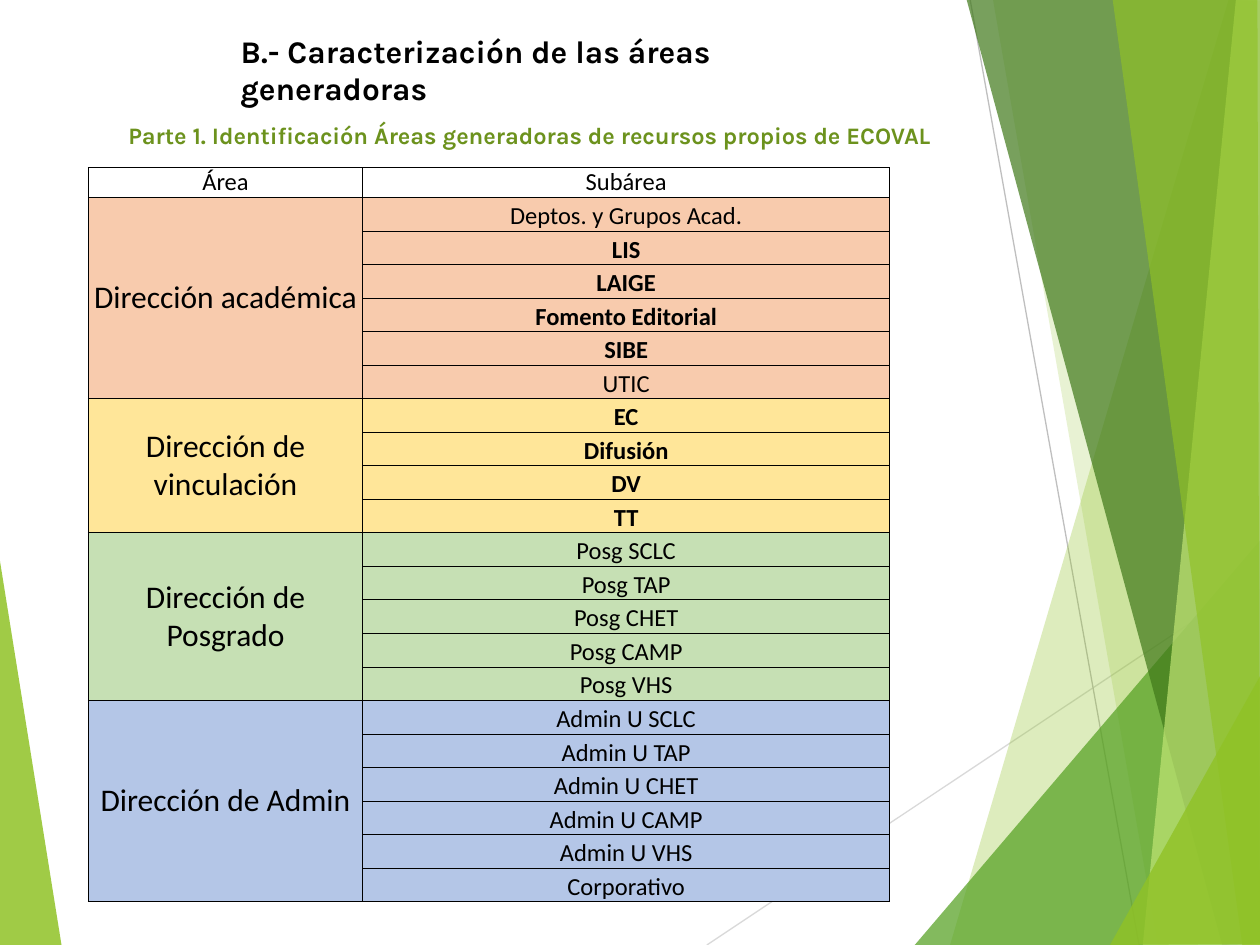
from lxml import etree
from pptx import Presentation
from pptx.dml.color import RGBColor
from pptx.enum.shapes import MSO_CONNECTOR
from pptx.enum.text import MSO_ANCHOR, MSO_AUTO_SIZE, PP_ALIGN
from pptx.oxml.ns import qn
from pptx.util import Inches, Pt

LEFT, CENTER = PP_ALIGN.LEFT, PP_ALIGN.CENTER
TOP, MIDDLE, BOTTOM = MSO_ANCHOR.TOP, MSO_ANCHOR.MIDDLE, MSO_ANCHOR.BOTTOM
NO_FIT = MSO_AUTO_SIZE.NONE
STRAIGHT = MSO_CONNECTOR.STRAIGHT

HUES = {
    "black": "000000", "olive": "6C921D", "lime": "90C226",
    "green": "54A021", "dark": "3F7819", "pale": "C0E474",
    "silver": "D9D9D9", "gray": "BFBFBF",
    "peach": "F8CBAD", "cream": "FFE699", "mint": "C6E0B4", "sky": "B4C6E7",
}

SITES = ["SCLC", "TAP", "CHET", "CAMP", "VHS"]
AREAS = [
    ("Dirección académica", "peach",
     ["Deptos. y Grupos Acad.", "LIS", "LAIGE", "Fomento Editorial", "SIBE", "UTIC"]),
    ("Dirección de vinculación", "cream", ["EC", "Difusión", "DV", "TT"]),
    ("Dirección de Posgrado", "mint", [f"Posg {site}" for site in SITES]),
    ("Dirección de Admin", "sky",
     [f"Admin U {site}" for site in SITES] + ["Corporativo"]),
]
BOLD = {"LIS", "LAIGE", "Fomento Editorial", "SIBE", "EC", "Difusión", "DV", "TT"}

LINES = [
    ((5.61, 7.5), (10.01, 4.57), "silver"),
    ((7.7, 0), (9.04, 7.5), "gray"),
]
SHARDS = [
    ("lime", 85, [(-0.01, 4.39), (0.49, 7.51), (-0.01, 7.5)]),
    ("lime", 30, [(9.75, 0), (7.54, 7.5), (10.02, 7.51), (10.01, 0.01)]),
    ("lime", 20, [(7.88, -0.01), (9.19, 7.5), (10.01, 7.5), (10.01, -0.01)]),
    ("green", 72, [(7.26, 7.5), (10, 4.29), (10.01, 7.5)]),
    ("dark", 70, [(7.67, -0.01), (9.7, 7.5), (10.01, 7.49), (10.01, -0.01)]),
    ("pale", 70, [(9.81, -0.01), (9.07, 7.5), (10.01, 7.5), (10, -0.01)]),
    ("lime", 65, [(8.83, -0.01), (9.86, 7.5), (10, 7.5), (9.98, -0.01)]),
    ("lime", 80, [(8.81, 7.5), (10.01, 5.35), (10.01, 7.49)]),
]


def rgb(hue):
    """Return the colour with the given name."""
    return RGBColor.from_string(HUES[hue])


def put(item, values):
    """Set each attribute in values on item."""
    for name, value in values.items():
        setattr(item, name, value)


def write(frame, text, align, hue, **font):
    """Write one formatted paragraph."""
    para = frame.paragraphs[0]
    para.alignment = align
    run = para.add_run()
    run.text = text
    put(run.font, font)
    run.font.color.rgb = rgb(hue)


def add_shard(slide, hue, alpha, points):
    """Add a see-through polygon."""
    start, *rest = [(Inches(x), Inches(y)) for x, y in points]
    pen = slide.shapes.build_freeform(*start, scale=1.0)
    pen.add_line_segments(rest, close=True)
    shard = pen.convert_to_shape()
    shard.shadow.inherit = False
    shard.fill.solid()
    shard.fill.fore_color.rgb = rgb(hue)
    shard.line.fill.background()
    tint = shard.fill._xPr.find(qn("a:solidFill"))[0]
    etree.SubElement(tint, qn("a:alpha"), val=str(alpha * 1000))


def add_line(slide, start, end, hue):
    """Add a thin straight line."""
    ends = [Inches(value) for value in start + end]
    line = slide.shapes.add_connector(STRAIGHT, *ends)
    line.line.color.rgb = rgb(hue)
    line.line.width = Pt(0.75)
    etree.SubElement(line._element.spPr, qn("a:effectLst"))


def place(shape, box, wrap):
    """Position a text shape and set up its frame."""
    put(shape, dict(zip(("left", "top", "width", "height"), map(Inches, box))))
    put(shape.text_frame, {
        "auto_size": NO_FIT, "word_wrap": wrap, "vertical_anchor": TOP})
    return shape.text_frame


def add_heads(slide):
    """Fill the title and add the subtitle."""
    frame = place(slide.shapes.title, (1.81, 0.2, 5.44, 0.4), True)
    write(frame, "B.- Caracterización de las áreas generadoras", LEFT, "black",
          name="Karla", size=Pt(18), bold=True)
    frame = place(slide.shapes.add_textbox(0, 0, 0, 0), (0.92, 0.91, 6.63, 0.33), False)
    write(frame, "Parte 1. Identificación Áreas generadoras de recursos propios de ECOVAL",
          LEFT, "olive", name="Karla", size=Pt(13.5), bold=True)


def style(cell, hue):
    """Give a cell thin borders, no margins and its fill."""
    props = cell._tc.get_or_add_tcPr()
    for side in ("lnL", "lnR", "lnT", "lnB"):
        edge = etree.SubElement(props, qn(f"a:{side}"), w=str(Pt(0.5)))
        fill = etree.SubElement(edge, qn("a:solidFill"))
        etree.SubElement(fill, qn("a:srgbClr"), val=HUES["black"])
    put(cell, dict.fromkeys(
        ("margin_left", "margin_right", "margin_top", "margin_bottom"), 0))
    if hue:
        cell.fill.solid()
        cell.fill.fore_color.rgb = rgb(hue)
    else:
        cell.fill.background()


def label(cell, text, size, anchor):
    """Write centred text in a cell."""
    cell.vertical_anchor = anchor
    write(cell.text_frame, text, CENTER, "black",
          name="Calibri", size=Pt(size), bold=text in BOLD)


def add_grid(slide):
    """Add the table of areas and their subareas."""
    count = sum(len(subs) for _, _, subs in AREAS)
    head, full = 0.23, 5.82
    box = map(Inches, (0.7, 1.33, 6.36, full))
    grid = slide.shapes.add_table(count + 1, 2, *box).table
    put(grid, {"first_row": False, "horz_banding": False})
    for col, width in zip(grid.columns, (2.18, 4.18)):
        col.width = Inches(width)
    for row in grid.rows:
        row.height = Inches((full - head) / count)
    grid.rows[0].height = Inches(head)
    for col, text in enumerate(("Área", "Subárea")):
        style(grid.cell(0, col), None)
        label(grid.cell(0, col), text, 14, MIDDLE)
    top = 1
    for area, hue, subs in AREAS:
        for row, sub in enumerate(subs, top):
            for col in range(2):
                style(grid.cell(row, col), hue)
            label(grid.cell(row, 1), sub, 14, BOTTOM)
        grid.cell(top, 0).merge(grid.cell(top + len(subs) - 1, 0))
        label(grid.cell(top, 0), area, 18, MIDDLE)
        top += len(subs)


def main():
    """Build and save the slide."""
    deck = Presentation()
    put(deck, {"slide_width": Inches(10), "slide_height": Inches(7.5)})
    slide = deck.slides.add_slide(deck.slide_layouts[5])
    add_shard(slide, *SHARDS[0])
    for line in LINES:
        add_line(slide, *line)
    for shard in SHARDS[1:]:
        add_shard(slide, *shard)
    add_grid(slide)
    add_heads(slide)
    deck.save("out.pptx")


if __name__ == "__main__":
    main()
